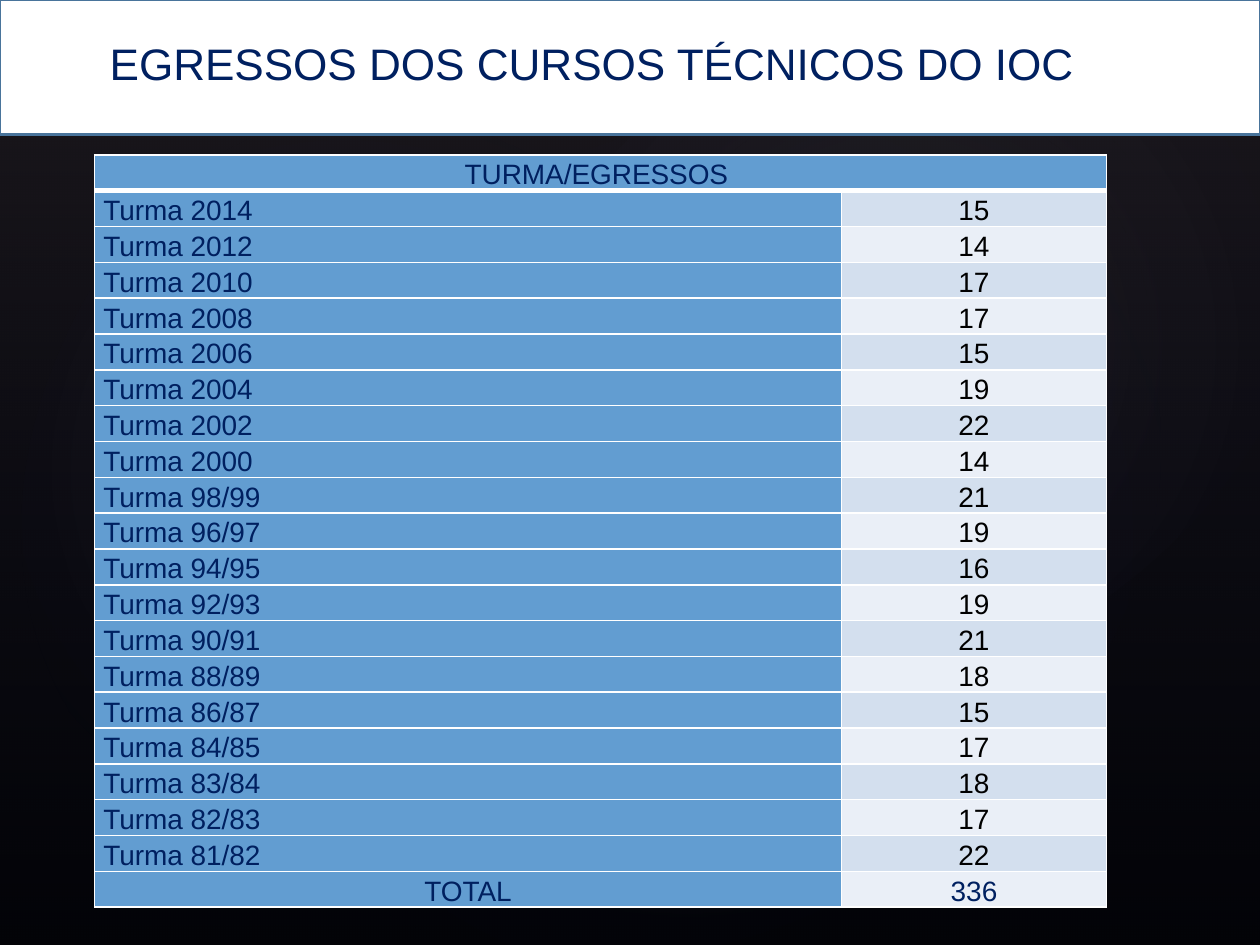
"""Build the slide on graduates of the technical courses."""

from dataclasses import dataclass

from pptx import Presentation
from pptx import util as u
from pptx.dml.color import RGBColor
from pptx.enum import shapes, text
from pptx.oxml import parse_xml
from pptx.oxml.ns import nsdecls
from pptx.slide import Slide
from pptx.table import _Cell as Cell


@dataclass(frozen=True)
class Theme:
    font: str = "Arial"
    title_size: float = 25.2
    table_size: float = 16
    line_spacing: float = 1.15
    navy: str = "002060"
    black: str = "000000"
    white: str = "FFFFFF"
    outline: str = "49749B"
    label_fill: str = "629DD1"
    bands: tuple[str, str] = ("D3DFEE", "EAEFF7")


@dataclass(frozen=True)
class Stop:
    position: int
    color: str
    opacity: int


@dataclass(frozen=True)
class Backdrop:
    left: float
    top: float
    width: float
    height: float
    rotation: float
    kind: shapes.MSO_SHAPE
    stops: tuple[Stop, ...]
    direction: str


@dataclass(frozen=True)
class ClassGroup:
    period: str
    graduates: int


THEME = Theme()
DOWNWARD = '<a:lin ang="5400000" scaled="0"/>'
RADIAL = (
    '<a:path path="circle">'
    '<a:fillToRect l="50000" t="50000" r="50000" b="50000"/></a:path>'
)


def glow(left: float, top: float, width: float, height: float,
         rotation: float, opacity: int) -> Backdrop:
    """Describe a soft ellipse that fades out from its centre."""
    stops = (Stop(0, "C4BCC6", opacity), Stop(58, "242852", 0))
    return Backdrop(left, top, width, height, rotation,
                    shapes.MSO_SHAPE.OVAL, stops, RADIAL)


BACKDROPS = (
    Backdrop(0, 0, 10, 7.5, 0, shapes.MSO_SHAPE.RECTANGLE,
             (Stop(0, "504652", 36), Stop(100, "242852", 10)), DOWNWARD),
    glow(1.5, 1.14, 7.92, 6.24, 328.7, 7),
    glow(-0.3, 1.28, 6.06, 4.9, 294.3, 8),
    glow(3.58, 0.13, 7.09, 5.2, 328.7, 8),
)

CLASS_GROUPS = (
    ClassGroup("2014", 15), ClassGroup("2012", 14), ClassGroup("2010", 17),
    ClassGroup("2008", 17), ClassGroup("2006", 15), ClassGroup("2004", 19),
    ClassGroup("2002", 22), ClassGroup("2000", 14), ClassGroup("98/99", 21),
    ClassGroup("96/97", 19), ClassGroup("94/95", 16), ClassGroup("92/93", 19),
    ClassGroup("90/91", 21), ClassGroup("88/89", 18), ClassGroup("86/87", 15),
    ClassGroup("84/85", 17), ClassGroup("83/84", 18), ClassGroup("82/83", 17),
    ClassGroup("81/82", 22),
)


def rgb(color: str) -> RGBColor:
    """Turn a hex string into a colour."""
    return RGBColor.from_string(color)


def draw_backdrop(slide: Slide, backdrop: Backdrop) -> None:
    """Draw a shape with a translucent gradient."""
    shape = slide.shapes.add_shape(
        backdrop.kind, u.Inches(backdrop.left), u.Inches(backdrop.top),
        u.Inches(backdrop.width), u.Inches(backdrop.height))
    shape.rotation = backdrop.rotation
    shape.shadow.inherit = False
    shape.line.fill.background()
    stops = "".join(
        f'<a:gs pos="{stop.position * 1000}"><a:srgbClr val="{stop.color}">'
        f'<a:alpha val="{stop.opacity * 1000}"/></a:srgbClr></a:gs>'
        for stop in backdrop.stops)
    gradient = parse_xml(
        f'<a:gradFill {nsdecls("a")} rotWithShape="1"><a:gsLst>{stops}</a:gsLst>'
        f'{backdrop.direction}</a:gradFill>')
    shape._element.spPr.prstGeom.addnext(gradient)


def draw_header(slide: Slide, title: str) -> None:
    """Draw the white band and place the title over it."""
    band = slide.shapes.add_shape(
        shapes.MSO_SHAPE.RECTANGLE, 0, 0, u.Inches(10), u.Inches(1.07))
    band.shadow.inherit = False
    band.fill.solid()
    band.fill.fore_color.rgb = rgb(THEME.white)
    band.line.color.rgb = rgb(THEME.outline)
    band.line.width = u.Pt(1.5)

    placeholder = slide.shapes.title
    placeholder.left, placeholder.top = u.Inches(0.77), u.Inches(-0.24)
    placeholder.width, placeholder.height = u.Inches(8.25), u.Inches(1)
    frame = placeholder.text_frame
    frame.text = title
    frame.word_wrap = True
    frame.auto_size = text.MSO_AUTO_SIZE.NONE
    frame.vertical_anchor = text.MSO_ANCHOR.BOTTOM
    paragraph = frame.paragraphs[0]
    paragraph.alignment = text.PP_ALIGN.LEFT
    font = paragraph.runs[0].font
    font.name, font.size = THEME.font, u.Pt(THEME.title_size)
    font.color.rgb = rgb(THEME.navy)
    slide.shapes._spTree.append(placeholder._element)


def format_cell(cell: Cell, content: str, fill: str, color: str = THEME.navy,
                centered: bool = True, top: int = 1, bottom: int = 1) -> None:
    """Write one table cell with its fill and white borders."""
    cell.text_frame.text = content
    cell.margin_left = cell.margin_right = u.Inches(0.07)
    cell.margin_top = cell.margin_bottom = 0
    properties = cell._tc.get_or_add_tcPr()
    for side, width in (("L", 1), ("R", 1), ("T", top), ("B", bottom)):
        properties.append(parse_xml(
            f'<a:ln{side} {nsdecls("a")} w="{u.Pt(width)}"><a:solidFill>'
            f'<a:srgbClr val="{THEME.white}"/></a:solidFill></a:ln{side}>'))
    cell.fill.solid()
    cell.fill.fore_color.rgb = rgb(fill)
    paragraph = cell.text_frame.paragraphs[0]
    paragraph.line_spacing = THEME.line_spacing
    paragraph.alignment = text.PP_ALIGN.CENTER if centered else text.PP_ALIGN.LEFT
    for run in paragraph.runs:
        run.font.name, run.font.size = THEME.font, u.Pt(THEME.table_size)
        run.font.bold = False
        run.font.color.rgb = rgb(color)


def draw_table(slide: Slide, groups: tuple[ClassGroup, ...]) -> None:
    """Draw the graduates of each class and their total."""
    row_count = len(groups) + 2
    table = slide.shapes.add_table(
        row_count, 2, u.Inches(0.75), u.Inches(1.23),
        u.Inches(8.03), u.Inches(0.27 * row_count)).table
    table.first_row = table.horz_banding = False
    table.columns[0].width, table.columns[1].width = u.Inches(5.93), u.Inches(2.1)

    heading = table.cell(0, 0)
    heading.merge(table.cell(0, 1))
    heading.vertical_anchor = text.MSO_ANCHOR.MIDDLE
    format_cell(heading, "TURMA/EGRESSOS ", THEME.label_fill, bottom=3)
    for row, group in enumerate(groups, start=1):
        top = 3 if row == 1 else 1
        format_cell(table.cell(row, 0), f"Turma {group.period}",
                    THEME.label_fill, centered=False, top=top)
        format_cell(table.cell(row, 1), str(group.graduates),
                    THEME.bands[(row - 1) % 2], THEME.black, top=top)
    total = sum(group.graduates for group in groups)
    format_cell(table.cell(row_count - 1, 0), "TOTAL", THEME.label_fill)
    format_cell(table.cell(row_count - 1, 1), str(total), THEME.bands[1])


def main() -> None:
    """Assemble and save the presentation."""
    presentation = Presentation()
    presentation.slide_width, presentation.slide_height = u.Inches(10), u.Inches(7.5)
    slide = presentation.slides.add_slide(presentation.slide_layouts[5])
    slide.background.fill.solid()
    slide.background.fill.fore_color.rgb = rgb(THEME.black)
    for backdrop in BACKDROPS:
        draw_backdrop(slide, backdrop)
    draw_table(slide, CLASS_GROUPS)
    draw_header(slide, "EGRESSOS DOS CURSOS TÉCNICOS DO IOC")
    presentation.save("out.pptx")


if __name__ == "__main__":
    main()
